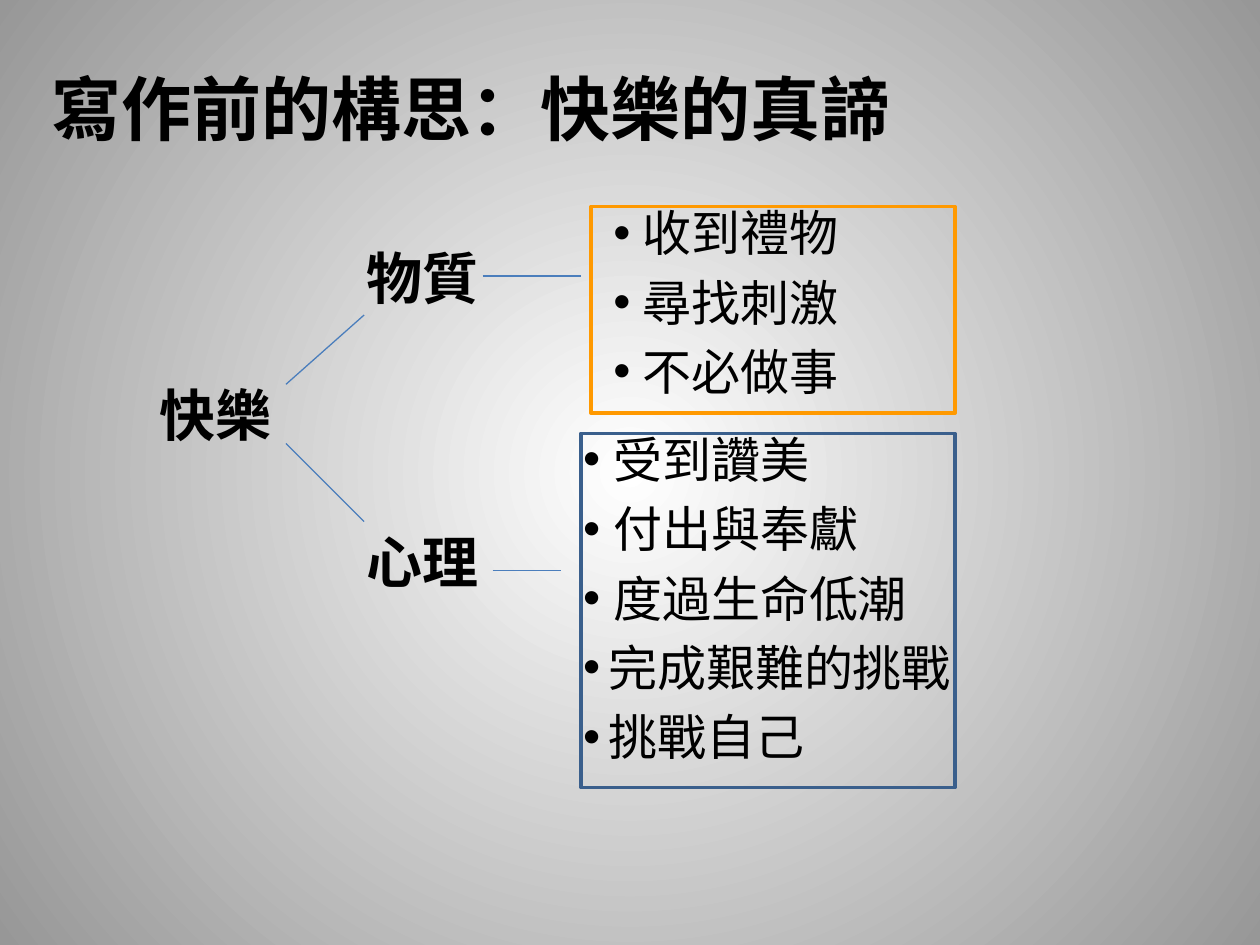
from dataclasses import dataclass

from lxml.etree import SubElement
from pptx import Presentation
from pptx.dml.color import RGBColor
from pptx.enum.shapes import MSO_CONNECTOR, MSO_SHAPE
from pptx.enum.text import MSO_ANCHOR
from pptx.oxml.ns import qn
from pptx.util import Inches, Pt

COLORS = {"text": "000000", "link": "4B7EBC", "material": "FF9900",
          "mind": "3A5F8C", "center": "FFFFFF", "edge": "979797"}
LATIN, CJK = "Arial", "Noto Sans CJK SC"
CELL = Inches(0.1)


@dataclass
class Box:
    """Area measured in columns and rows of the slide grid."""
    left: float
    top: float
    width: float
    height: float

    def inner(self, left, top, width, height):
        """Return an area placed relative to this one."""
        return Box(self.left + left, self.top + top, width, height)

    def lengths(self):
        """Return left, top, width and height as slide lengths."""
        return [round(n * CELL) for n in (self.left, self.top, self.width, self.height)]


def color(name):
    """Return a named colour."""
    return RGBColor.from_string(COLORS[name])


def paint_background(page):
    """Fill the page with a gradient that darkens from its centre."""
    fill = page.background.fill
    fill.gradient()
    for stop, name in zip(fill.gradient_stops, ("center", "edge")):
        stop.color.rgb = color(name)
    gradient = page._element.find(".//" + qn("a:gradFill"))
    gradient.remove(gradient.find(qn("a:lin")))
    circle = SubElement(gradient, qn("a:path"), {"path": "circle"})
    SubElement(circle, qn("a:fillToRect"), dict.fromkeys("ltrb", "50000"))


def add_text(page, box, lines, size, font=LATIN, bold=False):
    """Add a text box with one paragraph for each line and return its frame."""
    frame = page.shapes.add_textbox(*box.lengths()).text_frame
    frame.word_wrap = True
    frame.text = "\n".join(lines)
    for para in frame.paragraphs:
        for span in para.runs:
            span.font.size, span.font.bold = Pt(size), bold
            span.font.name = font
            span.font.color.rgb = color("text")
            SubElement(span.font._element, qn("a:ea"), typeface=CJK)
    return frame


def add_bullets(page, box, lines, indents):
    """Add a bulleted list with a hanging indent for each line."""
    frame = add_text(page, box, lines, 28)
    for para, indent in zip(frame.paragraphs, indents):
        para.space_before = Pt(6)
        settings = para._p.get_or_add_pPr()
        settings.set("marL", str(Inches(indent)))
        settings.set("indent", str(-Inches(indent)))
        SubElement(settings, qn("a:buFont"), typeface=LATIN)
        SubElement(settings, qn("a:buChar"), char="•")


def add_link(page, box):
    """Draw a thin line from the top left of a box to its far corner."""
    left, top, width, height = box.lengths()
    link = page.shapes.add_connector(
        MSO_CONNECTOR.STRAIGHT, left, top, left + width, top + height)
    link.line.color.rgb = color("link")
    link.line.width = Pt(0.75)
    SubElement(link._element.spPr, qn("a:effectLst"))


def add_frame(page, box, name):
    """Draw an unfilled rectangle outlined in a named colour."""
    frame = page.shapes.add_shape(MSO_SHAPE.RECTANGLE, *box.lengths())
    frame.shadow.inherit = False
    frame.fill.background()
    frame.line.color.rgb = color(name)
    frame.line.width = Pt(2)


def add_title(page, box, title):
    """Place the bold slide title."""
    frame = add_text(page, box, [title], 40, CJK, True)
    frame.vertical_anchor = MSO_ANCHOR.MIDDLE


def add_root(page, box, label):
    """Place the root idea and its two diverging lines."""
    add_text(page, box.inner(0, 6, 10.9, 6.4), [label], 32, bold=True)
    add_link(page, box.inner(11, 6.8, 6.2, -5.5))
    add_link(page, box.inner(11, 11.5, 6.2, 6.2))


def add_branch(page, box, name, label, label_top, link, list_area, frame_left, lines, indents):
    """Place a branch label, its line and its framed list in a box."""
    add_text(page, box.inner(0, label_top, 12.5, 6.4), [label], 32, bold=True)
    add_bullets(page, box.inner(*list_area), lines, indents)
    add_link(page, box.inner(*link, 0))
    add_frame(page, box.inner(frame_left, 0, box.width - frame_left, box.height), name)


def main():
    """Build the slide and save it."""
    deck = Presentation()
    deck.slide_width, deck.slide_height = 100 * CELL, 75 * CELL
    page = deck.slides.add_slide(deck.slide_layouts[6])
    paint_background(page)
    add_title(page, Box(3.1, 2.3, 90, 12.5), "寫作前的構思：快樂的真諦")
    add_root(page, Box(11.7, 23.7, 17.2, 17.7), "快樂")
    add_branch(page, Box(28.1, 16.4, 47.7, 16.4), "material", "物質", 2.4,
               (10.2, 5.5, 7.8), (19.6, -0.8, 29.7, 20.7), 18.8,
               ["收到禮物", "尋找刺激", "不必做事"], [0.23] * 3)
    add_branch(page, Box(28.1, 34.4, 47.7, 28.1), "mind", "心理", 7,
               (11, 10.9, 5.4), (17.2, -0.8, 32, 31.8), 18,
               ["受到讚美", "付出與奉獻", "度過生命低潮", "完成艱難的挑戰", "挑戰自己"],
               [0.24] * 3 + [0.2] * 2)
    deck.save("out.pptx")


if __name__ == "__main__":
    main()
